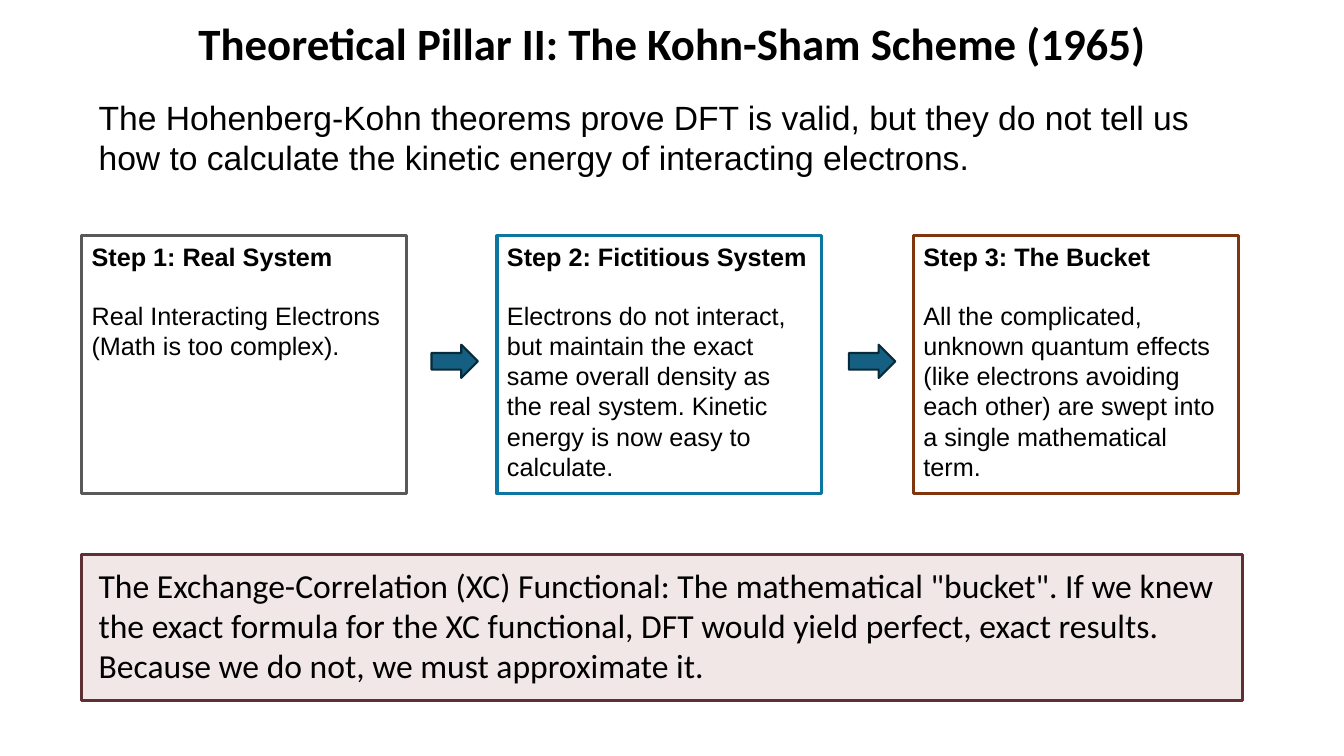
from pptx import Presentation
from pptx import util as u
from pptx.dml.color import RGBColor
from pptx.enum import shapes, text

PX = 9144  # 100 px to the inch
THEME = {
    "ink": "000000", "head": "Calibri", "body": "Arial",
    "title": 32, "lead": 24, "step": 18, "gap": 20.7,
    "arrow": "156082", "edge": "092A39",
    "note": "F1E7E6", "rim": "5E2F33",
}
STEPS = [
    ("595959", ["Step 1: Real System", "Real Interacting Electrons",
                "(Math is too complex)."]),
    ("0B76A0", ["Step 2: Fictitious System",
                "Electrons do not interact, but maintain the exact same overall "
                "density as the real system. Kinetic energy is now easy to calculate."]),
    ("80350E", ["Step 3: The Bucket",
                "All the complicated, unknown quantum effects (like electrons "
                "avoiding each other) are swept into a single mathematical term."]),
]


def write(shape, lines, face, size, align=text.PP_ALIGN.LEFT):
    """Fill a shape with top-anchored paragraphs in one font."""
    frame = shape.text_frame
    frame.word_wrap = True
    frame.auto_size = text.MSO_AUTO_SIZE.NONE
    frame.vertical_anchor = text.MSO_ANCHOR.TOP
    frame.text = "\n".join(lines)
    for para in frame.paragraphs:
        para.alignment = align
        para.font.name = THEME[face]
        para.font.size = u.Pt(THEME[size])
        para.font.color.rgb = RGBColor.from_string(THEME["ink"])
    return frame.paragraphs


def draw(kind, box, fill, line, width):
    shape = slide.shapes.add_shape(kind, *(n * PX for n in box))
    shape.shadow.inherit = False
    if fill:
        shape.fill.solid()
        shape.fill.fore_color.rgb = RGBColor.from_string(fill)
    else:
        shape.fill.background()
    shape.line.color.rgb = RGBColor.from_string(line)
    shape.line.width = u.Pt(width)
    return shape


deck = Presentation()
deck.slide_width, deck.slide_height = 1333 * PX, 750 * PX
slide = deck.slides.add_slide(deck.slide_layouts[5])

title = slide.shapes.title
title.left, title.top, title.width, title.height = (n * PX for n in (42, 17, 1250, 75))
head = write(title, ["Theoretical Pillar II: The Kohn-Sham Scheme (1965)"],
             "head", "title", text.PP_ALIGN.CENTER)[0]
head.font.bold = True
head.line_spacing = 0.9

# Framed conclusion, with its text in a box on top
RECT = shapes.MSO_SHAPE.RECTANGLE
draw(RECT, (81, 550, 1151, 145), THEME["note"], THEME["rim"], 2.25)
for box, face, words in [
    ((88, 555, 1140, 139), "head",
     'The Exchange-Correlation (XC) Functional: The mathematical "bucket". '
     "If we knew the exact formula for the XC functional, DFT would yield "
     "perfect, exact results. Because we do not, we must approximate it."),
    ((88, 91, 1121, 91), "body",
     "The Hohenberg-Kohn theorems prove DFT is valid, but they do not tell us "
     "how to calculate the kinetic energy of interacting electrons."),
]:
    write(slide.shapes.add_textbox(*(n * PX for n in box)), [words], face, "lead")

# Three steps in a row, joined by arrows
for i, (tint, lines) in enumerate(STEPS):
    card = draw(RECT, (81 + round(412.5 * i), 234, 322, 256), None, tint, 2.25)
    paras = write(card, lines, "body", "step")
    paras[0].font.bold = True
    paras[1].space_before = u.Pt(THEME["gap"])
    if i:
        draw(shapes.MSO_SHAPE.RIGHT_ARROW, (14 + 414 * i, 342, 46, 33),
             THEME["arrow"], THEME["edge"], 1.5)

deck.save("out.pptx")
